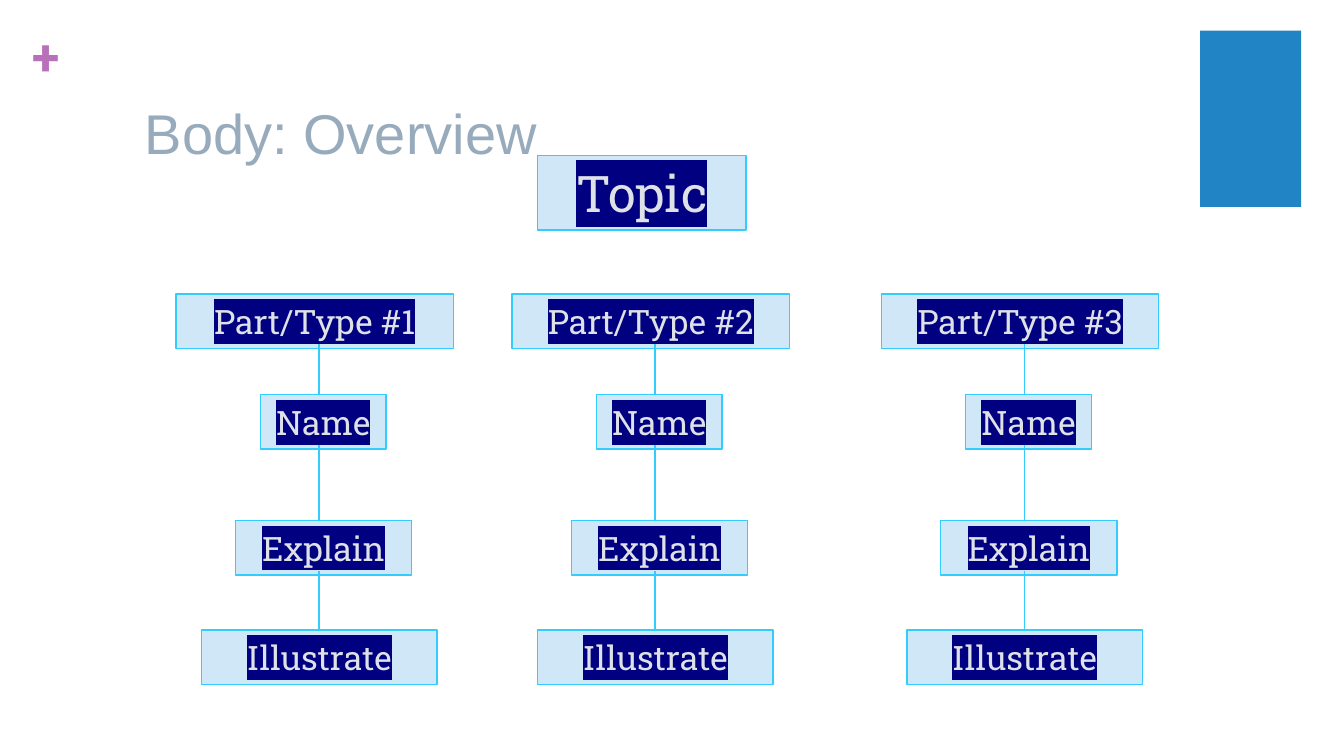
import pptx
import pptx.dml.color
import pptx.enum.shapes
import pptx.enum.text
import pptx.oxml
import pptx.oxml.ns
import pptx.util

Cm, Pt = pptx.util.Cm, pptx.util.Pt
ALIGN, ANCHOR = pptx.enum.text.PP_ALIGN, pptx.enum.text.MSO_ANCHOR
RECT = pptx.enum.shapes.MSO_SHAPE.RECTANGLE
STRAIGHT = pptx.enum.shapes.MSO_CONNECTOR.STRAIGHT

BLUE, PALE, CYAN = "2185C5", "CFE7F7", "33CCFF"
TITLE = ("Body: Overview", (2.49, 0.99, 17.96, 2.39),
         {"size": Pt(30), "name": "Arial", "color": "97ABBC"})
PLUS = ("+", (0.61, 0.48, 0.71, 1.14),
        {"size": Pt(27), "name": "Roboto Slab", "bold": True, "color": "B870B8"})
ACCENT = (22.68, 0.58, 1.91, 3.33)
TOPIC = ("Topic", (10.16, 2.94, 3.94, 1.41))
BOX_FONT = {"name": "Roboto Slab", "color": "DEE2E6"}
HIGHLIGHT = "000080"

COLUMN_SHIFTS = [0, 6.35, 13.33]
BOX_HEIGHT = 1.03
# label, left in the first column, top, width
ROWS = [
    ("Part/Type #{}", 3.33, 5.56, 5.24),
    ("Name", 4.92, 7.46, 2.38),
    ("Explain", 4.45, 9.84, 3.33),
    ("Illustrate", 3.81, 11.91, 4.45),
]
AXIS = 6.03
LINK_OVERLAP = 0.08


def rgb(value):
    return pptx.dml.color.RGBColor.from_string(value)


def write(sp, text, font, align, anchor, margin=0, highlight=None):
    tf = sp.text_frame
    frame = {"word_wrap": True, "vertical_anchor": anchor}
    for side in ("left", "top", "right", "bottom"):
        frame["margin_" + side] = Cm(margin)
    for name, value in frame.items():
        setattr(tf, name, value)
    p = tf.paragraphs[0]
    p.alignment = align
    r = p.add_run()
    r.text = text
    for name, value in font.items():
        if name == "color":
            r.font.color.rgb = rgb(value)
        else:
            setattr(r.font, name, value)
    if highlight:
        mark = pptx.oxml.parse_xml(
            f'<a:highlight {pptx.oxml.ns.nsdecls("a")}>'
            f'<a:srgbClr val="{highlight}"/></a:highlight>')
        r.font.fill._xPr.find(pptx.oxml.ns.qn("a:solidFill")).addnext(mark)


def add_rect(slide, place, fill, line=None):
    sp = slide.shapes.add_shape(RECT, *map(Cm, place))
    sp.shadow.inherit = False
    sp.fill.solid()
    sp.fill.fore_color.rgb = rgb(fill)
    if line:
        sp.line.color.rgb = rgb(line)
        sp.line.width = Pt(0.75)
    else:
        sp.line.fill.background()
    return sp


def add_box(slide, text, place, size):
    sp = add_rect(slide, place, PALE, CYAN)
    write(sp, text, {**BOX_FONT, "size": Pt(size)}, ALIGN.CENTER,
          ANCHOR.MIDDLE, highlight=HIGHLIGHT)


def add_link(slide, x, top, bottom):
    line = slide.shapes.add_connector(STRAIGHT, Cm(x), Cm(top), Cm(x), Cm(bottom))
    line.line.color.rgb = rgb(CYAN)
    line.line.width = Pt(0.75)
    line._element.spPr.append(pptx.oxml.parse_xml(
        f'<a:effectLst {pptx.oxml.ns.nsdecls("a")}/>'))


def main():
    prs = pptx.Presentation()
    prs.slide_width, prs.slide_height = Cm(25.4), Cm(14.29)
    slide = prs.slides.add_slide(prs.slide_layouts[6])

    add_rect(slide, ACCENT, BLUE)
    for (text, place, font), anchor, margin in (
            (PLUS, ANCHOR.TOP, 0), (TITLE, ANCHOR.BOTTOM, 0.25)):
        sp = slide.shapes.add_textbox(*map(Cm, place))
        write(sp, text, font, ALIGN.LEFT, anchor, margin)

    add_box(slide, *TOPIC, 27)
    for number, shift in enumerate(COLUMN_SHIFTS, 1):
        for label, left, top, width in ROWS:
            add_box(slide, label.format(number),
                    (left + shift, top, width, BOX_HEIGHT), 18)
        for upper, lower in zip(ROWS, ROWS[1:]):
            add_link(slide, AXIS + shift,
                     upper[2] + BOX_HEIGHT - LINK_OVERLAP, lower[2])

    prs.save("out.pptx")


if __name__ == "__main__":
    main()
